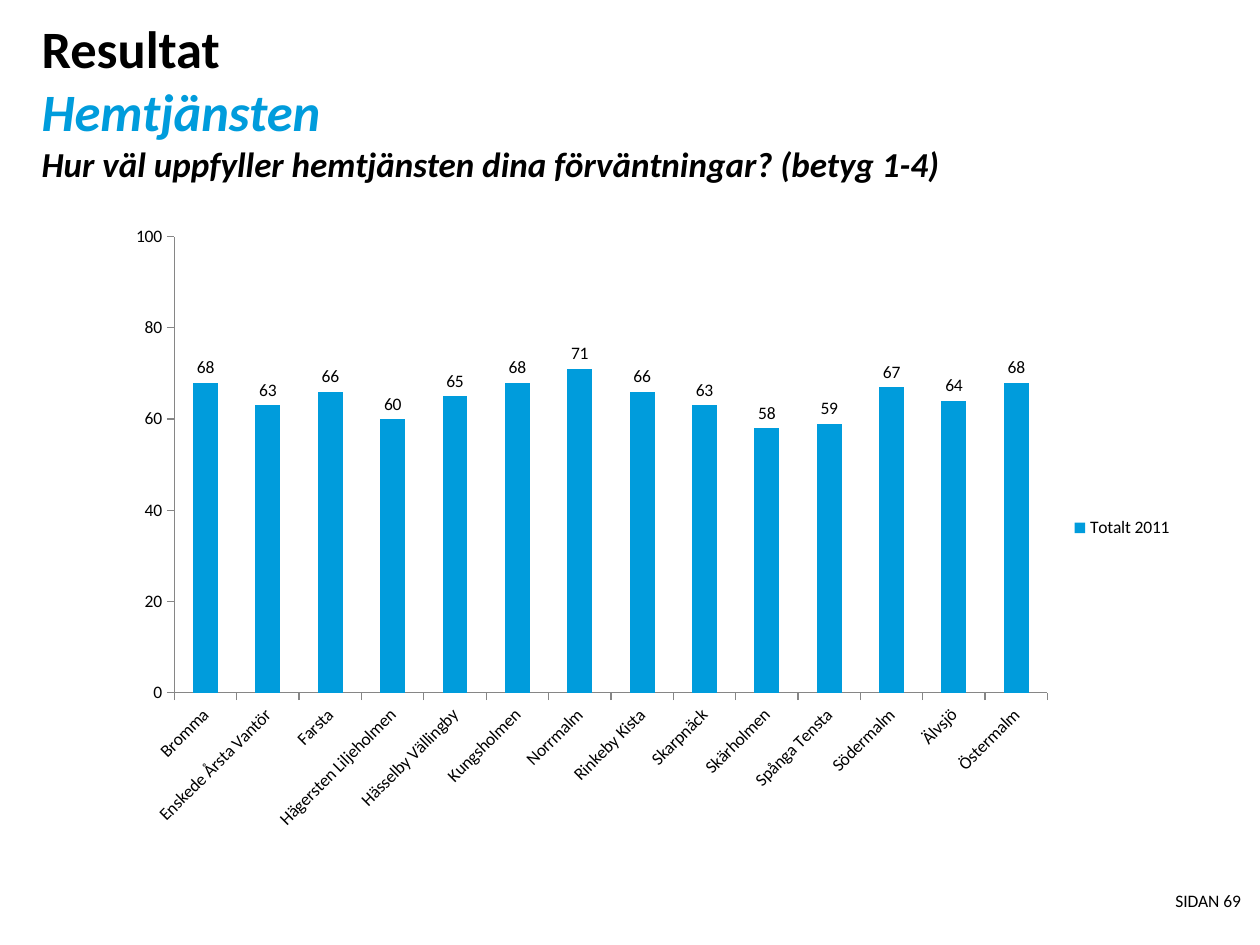
from typing import NamedTuple

from pptx import Presentation
from pptx.chart.data import CategoryChartData
from pptx.dml.color import RGBColor
from pptx.enum.chart import XL_CHART_TYPE, XL_LABEL_POSITION, XL_LEGEND_POSITION, XL_TICK_MARK
from pptx.enum.text import MSO_ANCHOR, PP_ALIGN
from pptx.util import Inches, Pt

FONT = "Calibri"
BLACK, BLUE, GREY = "000000", "009CDC", "868686"


class TitleLine(NamedTuple):
    text: str
    size: int
    color: str
    italic: bool


TITLE_LINES = [
    TitleLine("Resultat", 30, BLACK, False),
    TitleLine("Hemtjänsten", 30, BLUE, True),
    TitleLine("Hur väl uppfyller hemtjänsten dina förväntningar? (betyg 1-4)", 20, BLACK, True),
]
SCORES = {
    "Bromma": 68, "Enskede Årsta Vantör": 63, "Farsta": 66, "Hägersten Liljeholmen": 60,
    "Hässelby Vällingby": 65, "Kungsholmen": 68, "Norrmalm": 71, "Rinkeby Kista": 66,
    "Skarpnäck": 63, "Skärholmen": 58, "Spånga Tensta": 59, "Södermalm": 67,
    "Älvsjö": 64, "Östermalm": 68,
}


def rgb(color: str) -> RGBColor:
    return RGBColor.from_string(color)


def set_font(font, size: int, color: str = BLACK) -> None:
    font.name = FONT
    font.size = Pt(size)
    font.color.rgb = rgb(color)


def prepare_frame(tf) -> None:
    """Wrap the text, anchor it at the top and remove the insets."""
    tf.word_wrap = True
    tf.vertical_anchor = MSO_ANCHOR.TOP
    tf.margin_left = tf.margin_top = tf.margin_right = tf.margin_bottom = 0


def add_title(s) -> None:
    title = s.shapes.title
    title.left, title.top = Inches(0.33), Inches(0.13)
    title.width, title.height = Inches(9.25), Inches(0.94)
    tf = title.text_frame
    prepare_frame(tf)
    p = tf.paragraphs[0]
    p.alignment = PP_ALIGN.LEFT
    p.font.bold = True
    for i, line in enumerate(TITLE_LINES):
        if i:
            p.add_line_break()
        r = p.add_run()
        r.text = line.text
        set_font(r.font, line.size, line.color)
        r.font.bold = True
        r.font.italic = line.italic


def add_score_chart(s) -> None:
    data = CategoryChartData()
    data.categories = list(SCORES)
    data.add_series("Totalt 2011", list(SCORES.values()))
    chart = s.shapes.add_chart(XL_CHART_TYPE.COLUMN_CLUSTERED, Inches(0.91), Inches(1.7),
                               Inches(8.5), Inches(4.98), data).chart
    set_font(chart.font, 10)
    chart.has_title = False
    chart.has_legend = True
    chart.legend.position = XL_LEGEND_POSITION.RIGHT
    chart.legend.include_in_layout = False

    for axis in (chart.category_axis, chart.value_axis):
        axis.has_major_gridlines = False
        axis.major_tick_mark = XL_TICK_MARK.OUTSIDE
        axis.minor_tick_mark = XL_TICK_MARK.NONE
        axis.format.line.color.rgb = rgb(GREY)
        set_font(axis.tick_labels.font, 10)
    chart.category_axis._element.txPr.bodyPr.set("rot", "-2700000")
    chart.value_axis.minimum_scale = 0
    chart.value_axis.maximum_scale = 100
    chart.value_axis.major_unit = 20

    plot = chart.plots[0]
    plot.gap_width = 150
    plot.vary_by_categories = False
    fill = plot.series[0].format.fill
    fill.solid()
    fill.fore_color.rgb = rgb(BLUE)
    plot.has_data_labels = True
    labels = plot.data_labels
    labels.show_value = True
    labels.position = XL_LABEL_POSITION.OUTSIDE_END
    set_font(labels.font, 10)


def add_page_number(s) -> None:
    tf = s.shapes.add_textbox(Inches(6.69), Inches(7.06), Inches(3.16), Inches(0.22)).text_frame
    prepare_frame(tf)
    p = tf.paragraphs[0]
    p.text = "SIDAN 69"
    p.alignment = PP_ALIGN.RIGHT
    set_font(p.font, 10)


def main() -> None:
    prs = Presentation()
    prs.slide_width, prs.slide_height = Inches(10), Inches(7.5)
    s = prs.slides.add_slide(prs.slide_layouts[5])
    add_title(s)
    add_score_chart(s)
    add_page_number(s)
    prs.save("out.pptx")


if __name__ == "__main__":
    main()
